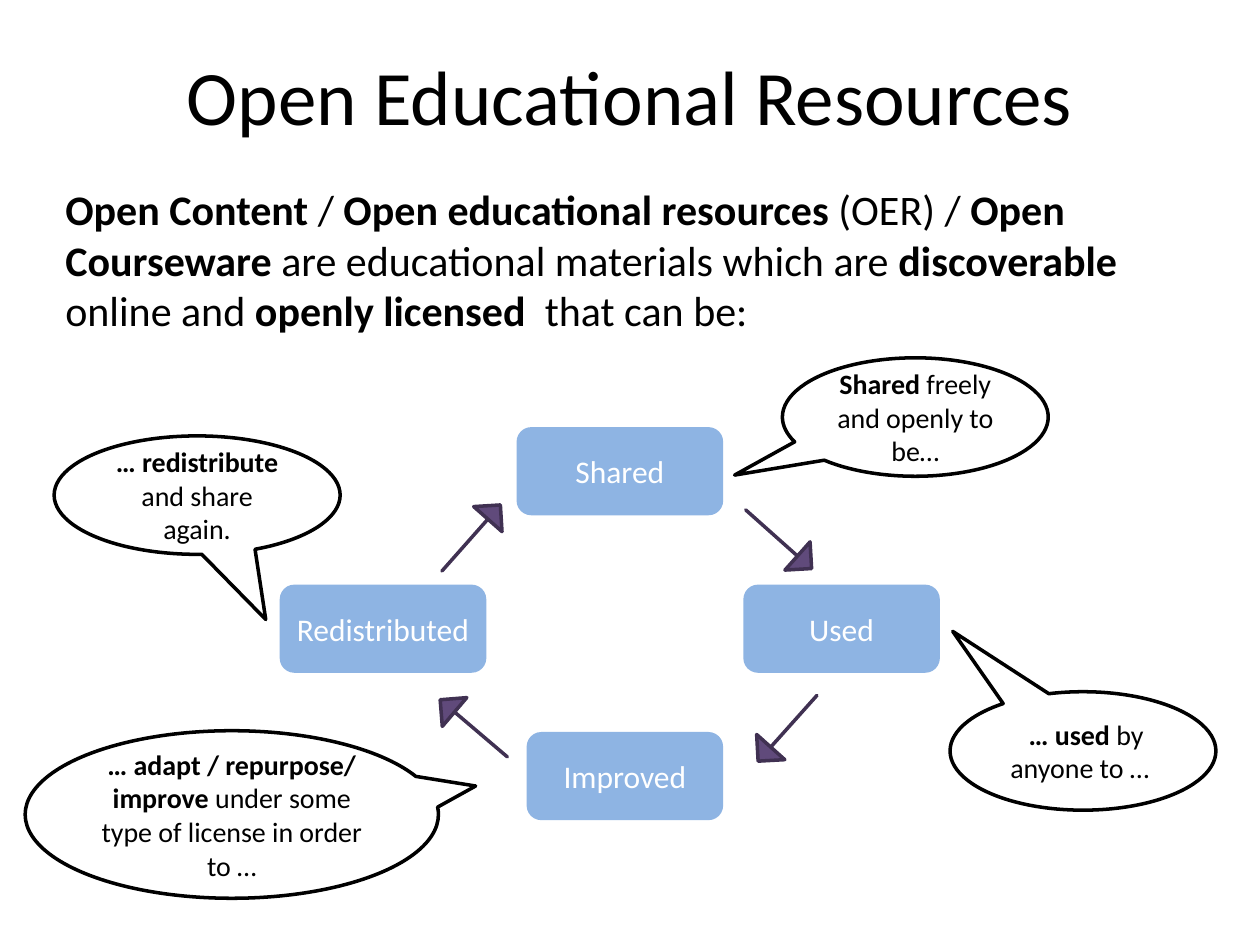
from dataclasses import dataclass

from pptx import Presentation
from pptx.dml.color import RGBColor
from pptx.enum.shapes import MSO_SHAPE
from pptx.enum.text import MSO_ANCHOR, PP_ALIGN
from pptx.util import Inches, Pt

ROUNDED = MSO_SHAPE.ROUNDED_RECTANGLE
CALLOUT = MSO_SHAPE.OVAL_CALLOUT
ARROW = MSO_SHAPE.NOTCHED_RIGHT_ARROW
MIDDLE, TOP = MSO_ANCHOR.MIDDLE, MSO_ANCHOR.TOP
CENTER, LEFT = PP_ALIGN.CENTER, PP_ALIGN.LEFT


@dataclass(frozen=True)
class Theme:
    font: str = "Calibri"
    ink: str = "000000"
    paper: str = "FFFFFF"
    stage: str = "8EB4E3"
    arrow: str = "604A7B"
    arrow_edge: str = "403152"
    title_size: int = 44
    body_size: int = 24
    stage_size: int = 18
    callout_size: int = 16
    line_width: int = 2


class SlideBuilder:
    def __init__(self, slide, theme):
        self.slide = slide
        self.theme = theme

    def add_runs(self, frame, runs, size, color, align, anchor):
        frame.word_wrap = True
        frame.vertical_anchor = anchor
        paragraph = frame.paragraphs[0]
        paragraph.alignment = align
        for words, bold in runs:
            run = paragraph.add_run()
            run.text = words
            run.font.name = self.theme.font
            run.font.size = Pt(size)
            run.font.bold = bold
            run.font.color.rgb = RGBColor.from_string(color)

    def text(self, box, runs, size, align=LEFT, anchor=TOP):
        area = self.slide.shapes.add_textbox(*map(Inches, box))
        self.add_runs(area.text_frame, runs, size, self.theme.ink, align, anchor)

    def shape(self, preset, box, fill, edge=None):
        shape = self.slide.shapes.add_shape(preset, *map(Inches, box))
        shape.shadow.inherit = False
        shape.fill.solid()
        shape.fill.fore_color.rgb = RGBColor.from_string(fill)
        if edge:
            shape.line.color.rgb = RGBColor.from_string(edge)
            shape.line.width = Pt(self.theme.line_width)
        else:
            shape.line.fill.background()
        return shape

    def stage(self, label, left, top, width):
        stage = self.shape(ROUNDED, (left, top, width, 0.7), self.theme.stage)
        self.add_runs(stage.text_frame, [(label, False)], self.theme.stage_size,
                      self.theme.paper, CENTER, MIDDLE)

    def callout(self, box, tip, runs):
        callout = self.shape(CALLOUT, box, self.theme.paper, self.theme.ink)
        callout.adjustments[0], callout.adjustments[1] = tip
        self.add_runs(callout.text_frame, runs, self.theme.callout_size,
                      self.theme.ink, CENTER, MIDDLE)

    def arrow(self, left, top, angle):
        arrow = self.shape(ARROW, (left, top, 0.7, 0.3),
                           self.theme.arrow, self.theme.arrow_edge)
        arrow.adjustments[0], arrow.adjustments[1] = 0, 0.5
        arrow.rotation = angle


INTRO = [
    ("Open Content ", True),
    ("/ ", False),
    ("Open educational resources ", True),
    ("(OER) / ", False),
    ("Open Courseware ", True),
    ("are educational materials which are ", False),
    ("discoverable", True),
    (" online and ", False),
    ("openly licensed", True),
    ("  that can be:", False),
]

STAGES = [
    ("Shared", 4.1, 3.39, 1.64),
    ("Used", 5.9, 4.64, 1.56),
    ("Improved", 4.18, 5.81, 1.56),
    ("Redistributed", 2.22, 4.64, 1.64),
]

ARROWS = [
    (5.83, 4.13, 41.7),
    (5.9, 5.63, 131.8),
    (3.41, 5.63, 220.4),
    (3.39, 4.12, 311.5),
]

CALLOUTS = [
    ((6.21, 2.84, 2.11, 0.94), (-0.68, 0.49),
     [("Shared", True), (" freely and openly to be…", False)]),
    ((7.54, 5.49, 2.11, 0.94), (-0.49, -1.01),
     [(" … used ", True), ("by anyone to … ", False)]),
    ((0.2, 5.8, 3.28, 1.33), (0.59, -0.17),
     [("… adapt / repurpose/ improve ", True),
      ("under some type of license in order to …", False)]),
    ((0.43, 3.46, 2.27, 0.94), (0.24, 1.05),
     [("… redistribute ", True), ("and share again.", False)]),
]


def main():
    deck = Presentation()
    deck.slide_width, deck.slide_height = Inches(10), Inches(7.5)
    theme = Theme()
    builder = SlideBuilder(deck.slides.add_slide(deck.slide_layouts[6]), theme)

    builder.text((0.5, 0.13, 9, 1.25), [("Open Educational Resources", False)],
                 theme.title_size, CENTER, MIDDLE)
    builder.text((0.42, 1.41, 8.67, 1.31), INTRO, theme.body_size)
    for stage in STAGES:
        builder.stage(*stage)
    for arrow in ARROWS:
        builder.arrow(*arrow)
    for callout in CALLOUTS:
        builder.callout(*callout)

    deck.save("out.pptx")


if __name__ == "__main__":
    main()
